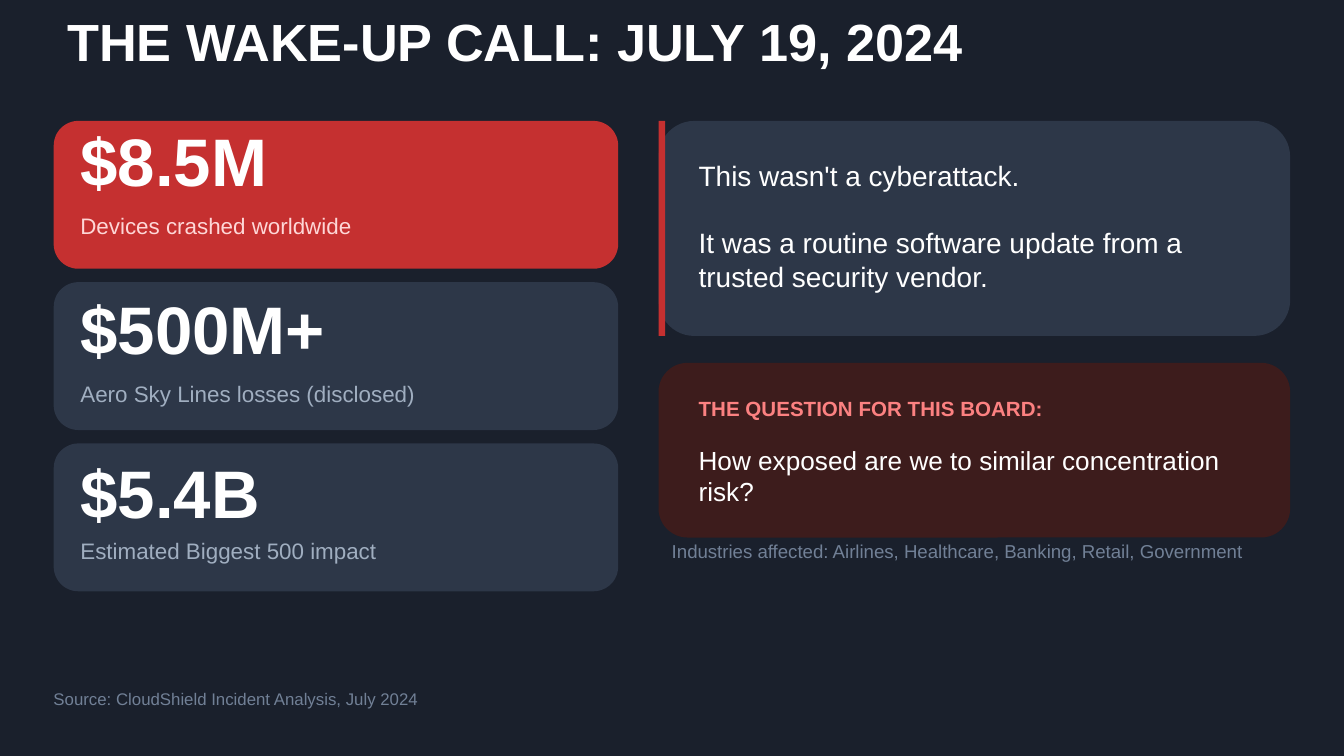
from dataclasses import dataclass

from pptx import Presentation
from pptx.dml.color import RGBColor
from pptx.enum.shapes import MSO_SHAPE
from pptx.enum.text import MSO_ANCHOR, MSO_AUTO_SIZE, PP_ALIGN
from pptx.util import Inches, Pt

WHITE, RED, SLATE, GREY = "FFFFFF", "C53030", "2D3748", "718096"


@dataclass
class Stat:
    value: str
    label: str
    value_y: float
    label_y: float
    fill: str = SLATE
    label_color: str = "A0AEC0"


STATS = [
    Stat("$8.5M", "Devices crashed worldwide", 1.19, 1.68, RED, "FED7D7"),
    Stat("$500M+", "Aero Sky Lines losses (disclosed)", 2.44, 2.93),
    Stat("$5.4B", "Estimated Biggest 500 impact", 3.66, 4.1),
]


def rgb(color: str) -> RGBColor:
    return RGBColor.from_string(color)


def add_panel(s, x: float, y: float, w: float, h: float, fill: str,
              kind=MSO_SHAPE.ROUNDED_RECTANGLE) -> None:
    sp = s.shapes.add_shape(kind, Inches(x), Inches(y), Inches(w), Inches(h))
    sp.shadow.inherit = False
    sp.fill.solid()
    sp.fill.fore_color.rgb = rgb(fill)
    sp.line.fill.background()


def format_text(sp, text: str, size: float, color: str, bold: bool) -> None:
    tf = sp.text_frame
    tf.text = text
    tf.word_wrap = True
    tf.auto_size = MSO_AUTO_SIZE.NONE
    tf.vertical_anchor = MSO_ANCHOR.MIDDLE
    for p in tf.paragraphs:
        p.alignment = PP_ALIGN.LEFT
        for r in p.runs:
            r.font.name = "Arial"
            r.font.size = Pt(size)
            r.font.bold = bold
            r.font.color.rgb = rgb(color)


def add_text(s, text: str, x: float, mid_y: float, w: float, size: float,
             color: str = WHITE, bold: bool = False, h: float = 0.4):
    """Add a text box centred vertically on mid_y."""
    sp = s.shapes.add_textbox(Inches(x), Inches(mid_y - h / 2), Inches(w), Inches(h))
    format_text(sp, text, size, color, bold)
    return sp


def main() -> None:
    prs = Presentation()
    prs.slide_width = Inches(10)
    prs.slide_height = prs.slide_width * 9 // 16
    s = prs.slides.add_slide(prs.slide_layouts[5])
    s.background.fill.solid()
    s.background.fill.fore_color.rgb = rgb("1A202C")

    title = s.shapes.title
    title.left, title.top = Inches(0.4), Inches(0)
    title.width, title.height = Inches(9.2), Inches(0.6)
    format_text(title, "THE WAKE-UP CALL: JULY 19, 2024", 28, WHITE, True)

    for i, stat in enumerate(STATS):
        add_panel(s, 0.4, 0.9 + 1.2 * i, 4.2, 1.1, stat.fill)
        add_text(s, stat.value, 0.5, stat.value_y, 4, 36, bold=True, h=0.7)
        add_text(s, stat.label, 0.5, stat.label_y, 4, 12, stat.label_color)

    add_panel(s, 4.9, 0.9, 4.7, 1.6, SLATE)
    add_panel(s, 4.9, 0.9, 0.05, 1.6, RED, MSO_SHAPE.RECTANGLE)
    message = add_text(
        s, "This wasn't a cyberattack.\n"
        "It was a routine software update from a trusted security vendor.",
        5.1, 1.68, 4.3, 15, h=1.2)
    message.text_frame.paragraphs[1].space_before = Pt(18)

    add_panel(s, 4.9, 2.7, 4.7, 1.3, "3D1C1C")
    add_text(s, "THE QUESTION FOR THIS BOARD:", 5.1, 3.04, 4.3, 11, "FC8181", True)
    add_text(s, "How exposed are we to similar concentration risk?",
             5.1, 3.54, 4.3, 14, h=0.6)

    add_text(s, "Industries affected: Airlines, Healthcare, Banking, Retail, Government",
             4.9, 4.1, 4.7, 10, GREY)
    add_text(s, "Source: CloudShield Incident Analysis, July 2024", 0.3, 5.2, 9.4, 9, GREY)
    prs.save("out.pptx")


if __name__ == "__main__":
    main()
